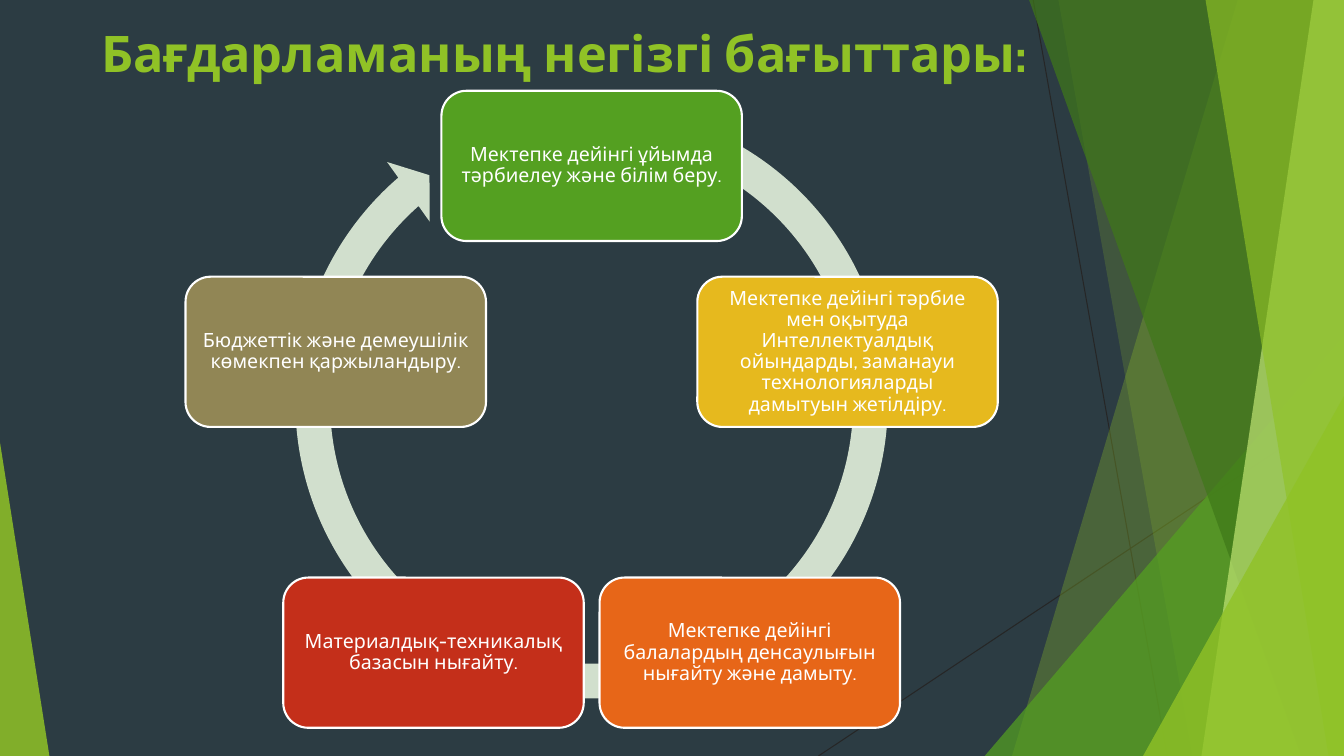
"""Build a slide with a five-step programme cycle on a faceted dark background."""
from dataclasses import dataclass
from math import cos, pi, sin

from lxml.etree import SubElement
from pptx import Presentation
from pptx.dml.color import RGBColor
from pptx.enum.shapes import MSO_CONNECTOR, MSO_SHAPE
from pptx.enum.text import MSO_ANCHOR, PP_ALIGN
from pptx.oxml.ns import qn
from pptx.shapes.autoshape import Shape
from pptx.shapes.shapetree import SlideShapes
from pptx.text.text import TextFrame
from pptx.util import Pt

WIDTH, HEIGHT = 960, 540
FONT = "Cabin"
DARK = RGBColor(0x2C, 0x3C, 0x43)
HAIRLINE = RGBColor(0x26, 0x26, 0x26)
LIME = RGBColor(0x90, 0xC2, 0x26)
GREEN = RGBColor(0x54, 0xA0, 0x21)
FOREST = RGBColor(0x3F, 0x78, 0x19)
PALE_LIME = RGBColor(0xC0, 0xE4, 0x74)
RING = RGBColor(0xD1, 0xDF, 0xCD)
GOLD = RGBColor(0xE6, 0xB9, 0x1E)
ORANGE = RGBColor(0xE7, 0x66, 0x18)
RED = RGBColor(0xC4, 0x2F, 0x1A)
OLIVE = RGBColor(0x91, 0x86, 0x55)
WHITE = RGBColor(0xFF, 0xFF, 0xFF)

CENTER_X, CENTER_Y, RADIUS = 422.6, 310.7, 192.2
BOX_W, BOX_H = 214.6, 107.3
RING_TOP, RING_SIZE = 61.9, 450.7
RING_ADJUSTMENTS = (0.055, 3.307, 137.364, 174.101, 0.058)


@dataclass(frozen=True)
class Band:
    """A facet reaching the right edge, with a slanted left side."""
    top_x: float
    bottom_x: float
    color: RGBColor
    opacity: int


@dataclass(frozen=True)
class Corner:
    """A right-angled triangle standing on the bottom edge."""
    left: float
    top: float
    width: float
    apex: float
    color: RGBColor
    opacity: int


@dataclass(frozen=True)
class Step:
    """One box of the cycle."""
    text: str
    color: RGBColor


HAIRLINES = ((738, 0, 833.8, HEIGHT), (WIDTH, 290.2, 584.6, HEIGHT))
FACETS = (
    Band(884.2, 722.9, LIME, 30),
    Band(756, 851.8, LIME, 20),
    Corner(703.4, 239.8, 256.6, 1, GREEN, 72),
    Band(735.1, 929.5, FOREST, 70),
    Band(938.2, 858.2, PALE_LIME, 70),
    Band(861.1, 949, LIME, 65),
    Corner(816.5, 283, 143.5, 1, LIME, 80),
    Corner(0, 316.1, 35.3, 0, LIME, 85),
)
STEPS = (
    Step("Мектепке дейінгі ұйымда тәрбиелеу және білім беру.", GREEN),
    Step("Мектепке дейінгі тәрбие мен оқытуда Интеллектуалдық ойындарды, "
         "заманауи технологияларды дамытуын жетілдіру.", GOLD),
    Step("Мектепке дейінгі балалардың денсаулығын нығайту және дамыту.", ORANGE),
    Step("Материалдық-техникалық базасын нығайту.", RED),
    Step("Бюджеттік және демеушілік көмекпен қаржыландыру.", OLIVE),
)


def paint(shape: Shape, color: RGBColor, opacity: int = 100) -> None:
    """Give a shape a flat fill without outline or shadow."""
    shape.shadow.inherit = False
    shape.fill.solid()
    shape.fill.fore_color.rgb = color
    shape.line.fill.background()
    if opacity < 100:
        fill = shape.element.spPr.find(qn("a:solidFill"))
        SubElement(fill[0], qn("a:alpha"), val=str(opacity * 1000))


def write(tf: TextFrame, text: str, size: float, color: RGBColor, bold: bool = False) -> None:
    """Write one centred paragraph into a text frame."""
    tf.word_wrap = True
    tf.vertical_anchor = MSO_ANCHOR.MIDDLE
    p = tf.paragraphs[0]
    p.alignment = PP_ALIGN.CENTER
    r = p.add_run()
    r.text = text
    r.font.name = FONT
    r.font.size = Pt(size)
    r.font.bold = bold
    r.font.color.rgb = color


def draw_hairline(shapes: SlideShapes, x1: float, y1: float, x2: float, y2: float) -> None:
    """Draw a thin background line."""
    line = shapes.add_connector(MSO_CONNECTOR.STRAIGHT, Pt(x1), Pt(y1), Pt(x2), Pt(y2))
    line.line.color.rgb = HAIRLINE
    line.line.width = Pt(0.75)
    SubElement(line.element.spPr, qn("a:effectLst"))


def draw_facet(shapes: SlideShapes, facet: Band | Corner) -> None:
    """Draw one translucent background facet."""
    if isinstance(facet, Band):
        builder = shapes.build_freeform(Pt(facet.top_x), 0)
        builder.add_line_segments(
            [(Pt(WIDTH), 0), (Pt(WIDTH), Pt(HEIGHT)), (Pt(facet.bottom_x), Pt(HEIGHT))])
        sp = builder.convert_to_shape()
    else:
        sp = shapes.add_shape(MSO_SHAPE.ISOSCELES_TRIANGLE, Pt(facet.left), Pt(facet.top),
                              Pt(facet.width), Pt(HEIGHT - facet.top))
        sp.adjustments[0] = facet.apex
    paint(sp, facet.color, facet.opacity)


def draw_ring(shapes: SlideShapes) -> None:
    """Draw the circular arrow behind the steps."""
    ring = shapes.add_shape(MSO_SHAPE.CIRCULAR_ARROW, Pt(CENTER_X - RING_SIZE / 2),
                            Pt(RING_TOP), Pt(RING_SIZE), Pt(RING_SIZE))
    for i, value in enumerate(RING_ADJUSTMENTS):
        ring.adjustments[i] = value
    paint(ring, RING)


def draw_step(shapes: SlideShapes, step: Step, angle: float) -> None:
    """Draw one step at a clockwise angle from the top of the cycle."""
    x = CENTER_X + RADIUS * sin(angle) - BOX_W / 2
    y = CENTER_Y - RADIUS * cos(angle) - BOX_H / 2
    sp = shapes.add_shape(MSO_SHAPE.ROUNDED_RECTANGLE, Pt(x), Pt(y), Pt(BOX_W), Pt(BOX_H))
    paint(sp, step.color)
    sp.line.color.rgb = WHITE
    sp.line.width = Pt(1.5)
    tf = sp.text_frame
    tf.margin_left = tf.margin_right = tf.margin_top = tf.margin_bottom = Pt(4.2)
    write(tf, step.text, 14, WHITE)
    p = tf.paragraphs[0]
    p.line_spacing = 0.9
    p.space_after = Pt(4.9)


def main() -> None:
    """Assemble and save the slide."""
    prs = Presentation()
    prs.slide_width, prs.slide_height = Pt(WIDTH), Pt(HEIGHT)
    s = prs.slides.add_slide(prs.slide_layouts[6])
    s.background.fill.solid()
    s.background.fill.fore_color.rgb = DARK

    for ends in HAIRLINES:
        draw_hairline(s.shapes, *ends)
    for facet in FACETS:
        draw_facet(s.shapes, facet)

    title = s.shapes.add_textbox(Pt(64.8), Pt(10.8), Pt(676.8), Pt(52.6))
    write(title.text_frame, "Бағдарламаның негізгі бағыттары:", 36, LIME, bold=True)

    draw_ring(s.shapes)
    for i, step in enumerate(STEPS):
        draw_step(s.shapes, step, 2 * pi * i / len(STEPS))
    prs.save("out.pptx")


if __name__ == "__main__":
    main()
